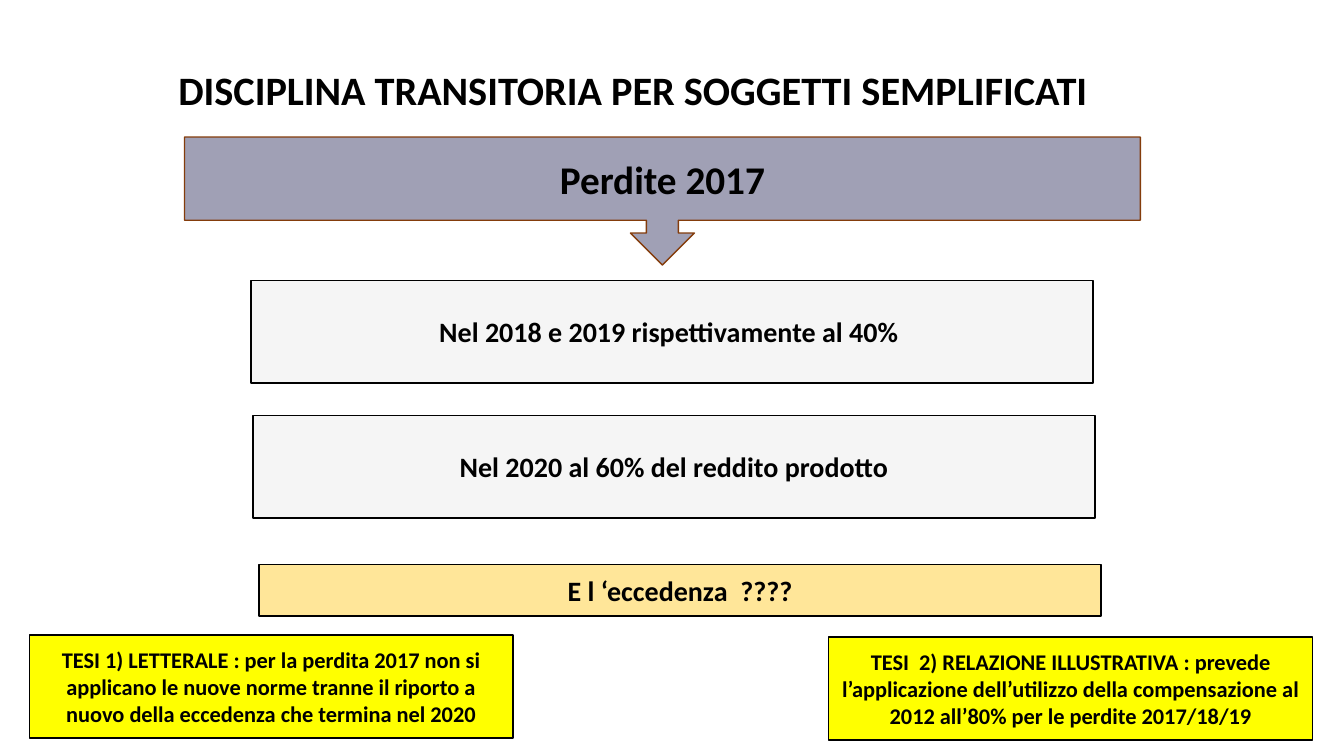
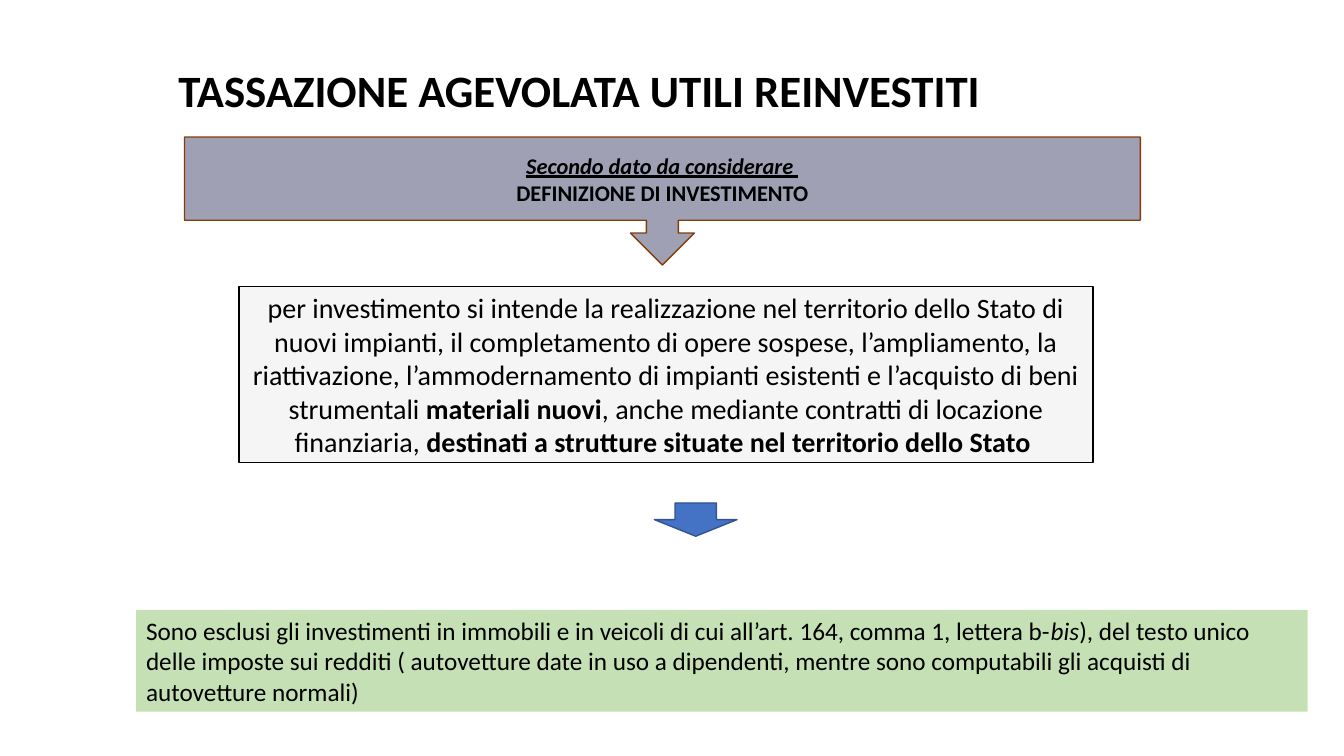
from lxml import etree
from pptx import Presentation
from pptx.dml.color import RGBColor
from pptx.enum import shapes, text
from pptx.oxml.ns import qn
from pptx.util import Inches, Pt

THEME = {
    "font": "Calibri",
    "ink": "000000", "band": "19194D", "edge": "843C0B",
    "grey": "F5F5F5", "gold": "FFE699", "yellow": "FFFF00",
    "green": "C5E0B4", "blue": "4472C4", "navy": "325491",
    "band_alpha": 41,
    "head": 28, "body": 20, "note": 18, "small": 16,
}
RECT = shapes.MSO_SHAPE.RECTANGLE
CALL = shapes.MSO_SHAPE.DOWN_ARROW_CALLOUT
ARROW = shapes.MSO_SHAPE.DOWN_ARROW
LEFT, MID = text.PP_ALIGN.LEFT, text.PP_ALIGN.CENTER


def write(shape, paras, size, style="", align=MID):
    """Each paragraph is a list of (words, style); style letters are b, i, u."""
    frame = shape.text_frame
    frame.word_wrap = True
    frame.vertical_anchor = text.MSO_ANCHOR.MIDDLE
    for n, runs in enumerate(paras):
        para = frame.paragraphs[0] if n == 0 else frame.add_paragraph()
        para.alignment = align
        font = para.font
        font.name, font.size = THEME["font"], Pt(size)
        font.color.rgb = RGBColor.from_string(THEME["ink"])
        font.bold = "b" in style
        for words, mark in runs:
            run = para.add_run()
            run.text = words
            if "b" in mark:
                run.font.bold = True
            if "i" in mark:
                run.font.italic = True
            if "u" in mark:
                run.font.underline = True


def draw(slide, kind, at, fill, line="ink"):
    shape = slide.shapes.add_shape(kind, *map(Inches, at))
    shape.shadow.inherit = False
    shape.fill.solid()
    shape.fill.fore_color.rgb = RGBColor.from_string(THEME[fill])
    if line:
        shape.line.color.rgb = RGBColor.from_string(THEME[line])
        shape.line.width = Pt(1)
    else:
        shape.line.fill.background()
    return shape


deck = Presentation()
deck.slide_width, deck.slide_height = Inches(13.33), Inches(7.5)

# Title and callout band on both slides
heads = [
    ("DISCIPLINA TRANSITORIA PER SOGGETTI SEMPLIFICATI", 28.8,
     [[("Perdite 2017", "")]], THEME["head"]),
    ("TASSAZIONE AGEVOLATA UTILI REINVESTITI", 32,
     [[("Secondo dato da considerare ", "iu")],
      [("DEFINIZIONE DI INVESTIMENTO", "")]], THEME["small"]),
]
for title, size, lead, lead_size in heads:
    slide = deck.slides.add_slide(deck.slide_layouts[6])
    box = slide.shapes.add_textbox(*map(Inches, (1.67, 0.62, 10, 0.6)))
    write(box, [[(title, "")]], size, "b", LEFT)
    box.text_frame.paragraphs[0].line_spacing = 0.9
    band = draw(slide, CALL, (1.83, 1.36, 9.48, 1.27), "band", "edge")
    color = band.fill._xPr.find(qn("a:solidFill"))[0]
    alpha = etree.SubElement(color, qn("a:alpha"))
    alpha.set("val", str(THEME["band_alpha"] * 1000))
    write(band, lead, lead_size, "b")

first, second = deck.slides

# Slide 1: steps and the two readings
boxes = [
    ((2.49, 2.78, 8.35, 1.02), "grey", "body",
     "Nel 2018 e 2019 rispettivamente al 40% "),
    ((2.51, 4.12, 8.35, 1.02), "grey", "body",
     "Nel 2020 al 60% del reddito prodotto"),
    ((2.57, 5.6, 8.35, 0.51), "gold", "body", "E l ‘eccedenza  ????"),
    ((0.29, 6.3, 4.8, 1.02), "yellow", "small",
     "TESI 1) LETTERALE : per la perdita 2017 non si applicano le nuove "
     "norme tranne il riporto a nuovo della eccedenza che termina nel 2020"),
    ((8.22, 6.32, 4.8, 1.02), "yellow", "small",
     "TESI  2) RELAZIONE ILLUSTRATIVA : prevede l’applicazione "
     "dell’utilizzo della compensazione al 2012 all’80% per le perdite "
     "2017/18/19"),
]
for at, fill, size, words in boxes:
    write(draw(first, RECT, at, fill), [[(words, "")]], THEME[size], "b")

# Slide 2: definition, arrow and exclusions
rule = draw(second, RECT, (2.37, 2.84, 8.47, 1.75), "grey")
write(rule, [[
    ("per investimento si intende la realizzazione nel territorio dello "
     "Stato di nuovi impianti, il completamento di opere sospese, "
     "l’ampliamento, la riattivazione, l’ammodernamento di impianti "
     "esistenti e l’acquisto di beni strumentali ", ""),
    ("materiali nuovi", "b"),
    (", anche mediante contratti di locazione finanziaria, ", ""),
    ("destinati a strutture situate nel territorio dello Stato ", "b"),
]], THEME["body"])

note = draw(second, RECT, (1.35, 6.05, 11.62, 1.01), "green", None)
write(note, [[
    ("Sono esclusi gli investimenti in immobili e in veicoli di cui "
     "all’art. 164, comma 1, lettera b-", ""),
    ("bis", "i"),
    ("), del testo unico delle imposte sui redditi ( autovetture date in "
     "uso a dipendenti, mentre sono computabili gli acquisti di "
     "autovetture normali)", ""),
]], THEME["note"], align=LEFT)

draw(second, ARROW, (6.49, 4.99, 0.82, 0.33), "blue", "navy")

deck.save("out.pptx")
